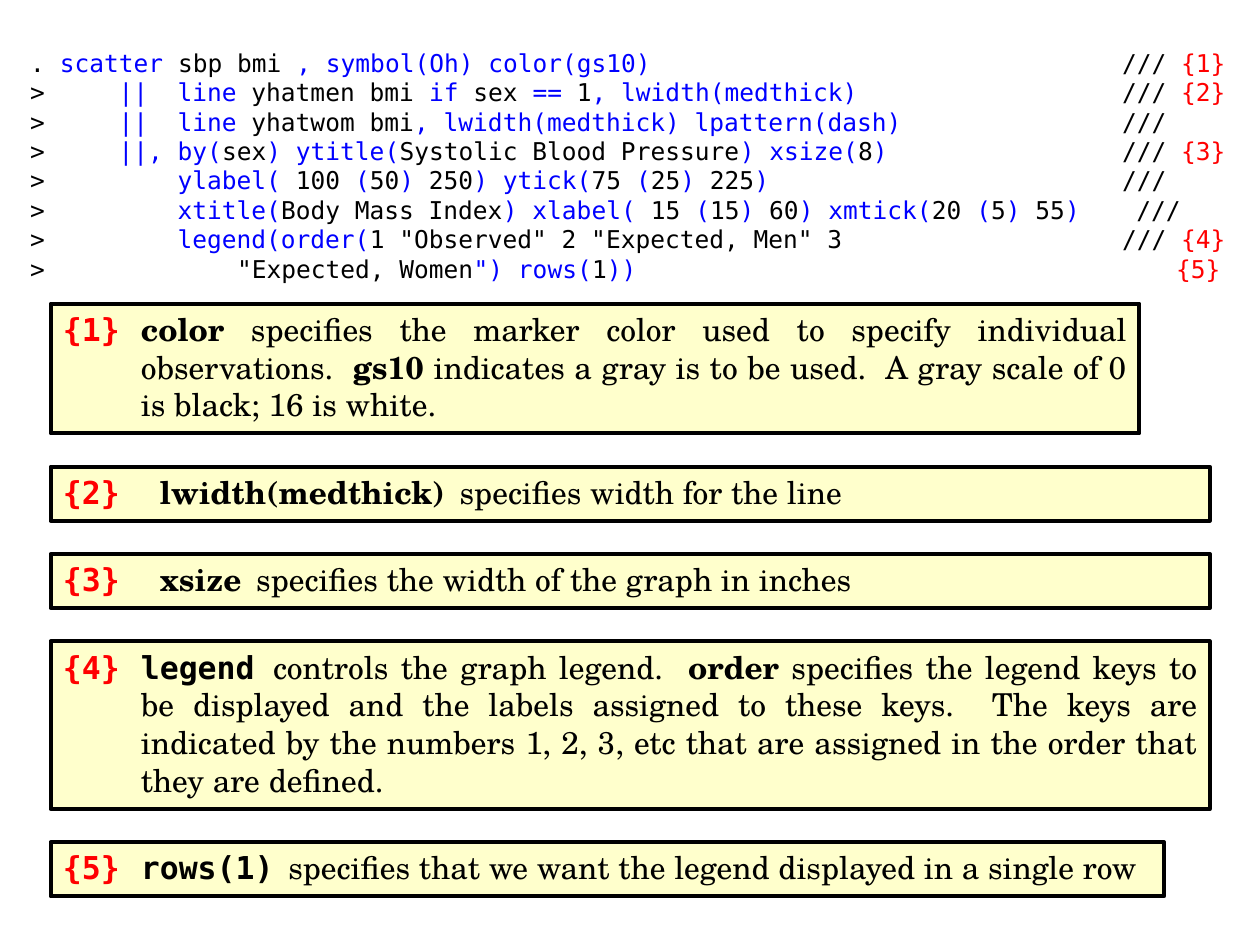
from lxml import etree
from pptx import Presentation
from pptx import util as u
from pptx.dml.color import RGBColor
from pptx.enum import shapes, text
from pptx.oxml import ns

MONO, SERIF = "DejaVu Sans Mono", "TeX Gyre Schola"
BLACK, BLUE, RED, CREAM = "000000", "0000FF", "FF0000", "FFFFCC"
STYLES = {
    "mark": (MONO, 18, True, RED),
    "code": (MONO, 18, True, BLACK),
    "gap": (MONO, 14, False, BLACK),
    "word": (SERIF, 18, True, BLACK),
    "body": (SERIF, 18, False, BLACK),
}


def tint(code):
    return RGBColor.from_string(code)


class Deck:
    def __init__(self, wide, high):
        self.prs = Presentation()
        self.prs.slide_width, self.prs.slide_height = u.Cm(wide), u.Cm(high)
        self.slide = self.prs.slides.add_slide(self.prs.slide_layouts[6])

    def run(self, para, words, font, size, bold, color):
        run = para.add_run()
        run.text = words
        run.font.name, run.font.size = font, u.Pt(size)
        run.font.bold = bold
        run.font.color.rgb = tint(color)

    def tabs(self, para, stops):
        props = para._p.get_or_add_pPr()
        group = etree.SubElement(props, ns.qn("a:tabLst"))
        for stop in stops:
            etree.SubElement(group, ns.qn("a:tab"), pos=str(u.Cm(stop)), algn="l")

    def frame(self, shape):
        frame = shape.text_frame
        frame.word_wrap = True
        frame.auto_size = text.MSO_AUTO_SIZE.SHAPE_TO_FIT_TEXT
        frame.vertical_anchor = text.MSO_ANCHOR.TOP
        return frame

    def listing(self, left, top, wide, high, rows):
        box = self.slide.shapes.add_textbox(*map(u.Cm, (left, top, wide, high)))
        frame = self.frame(box)
        for num, (code, mark, stops) in enumerate(rows):
            para = frame.add_paragraph() if num else frame.paragraphs[0]
            self.tabs(para, stops)
            for pos, part in enumerate(code.split("~")):
                if part:
                    self.run(para, part, MONO, 14, False, BLUE if pos % 2 else BLACK)
            if mark:
                self.run(para, mark, MONO, 14, False, RED)

    def note(self, left, top, wide, high, parts):
        box = self.slide.shapes.add_shape(
            shapes.MSO_SHAPE.RECTANGLE, *map(u.Cm, (left, top, wide, high)))
        box.shadow.inherit = False
        box.fill.solid()
        box.fill.fore_color.rgb = tint(CREAM)
        box.line.color.rgb = tint(BLACK)
        box.line.width = u.Pt(2.25)
        para = self.frame(box).paragraphs[0]
        para.alignment = text.PP_ALIGN.JUSTIFY
        props = para._p.get_or_add_pPr()
        props.set("marL", str(u.Cm(1.57)))
        props.set("indent", str(-u.Cm(1.57)))
        for style, words in parts:
            self.run(para, words, *STYLES[style])


IN1, IN2, IN3, END = 1.78, 2.97, 4.17, 22.01
ROWS = [
    (". ~scatter~ sbp bmi ~, symbol(Oh) color(gs10)~\t/// ", "{1}", [END]),
    (">\t~||\tline~ yhatmen bmi ~if~ sex ~==~ 1~, lwidth(medthick)~\t/// ",
     "{2}", [IN1, IN2, END]),
    (">\t~||\tline~ yhatwom bmi~, lwidth(medthick) lpattern(dash)~\t///",
     "", [IN1, IN2, END]),
    (">\t~||, by(~sex~) ytitle(~Systolic Blood Pressure~) xsize(~8~)~\t/// ",
     "{3}", [IN1, END]),
    (">\t~ylabel(~ 100 ~(~50~)~ 250~) ytick(~75 ~(~25~)~ 225~)~\t///",
     "", [IN2, END]),
    (">\t~xtitle(~Body Mass Index~) xlabel(~ 15 ~(~15~)~ 60~) xmtick(~20 ~(~5~)~ 55~)~\t///",
     "", [IN2, 22.3]),
    (">\t~legend(order(~1 \"Observed\" 2 \"Expected, Men\" 3\t/// ", "{4}", [IN2, END]),
    (">\t\"Expected, Women~\") rows(~1~))\t", "{5}", [IN3, 23.1]),
]

NOTES = [
    (21.95, 2.62, [
        ("mark", "{1}\t"), ("word", "color"),
        ("body", " specifies the marker color used to specify individual observations.  "),
        ("word", "gs10 "),
        ("body", "indicates a gray is to be used.  A gray scale of 0 is black; 16 is white.")]),
    (23.37, 1.09, [
        ("mark", "{2}\t "), ("word", "lwidth(medthick)"), ("gap", " "),
        ("body", "specifies width for the line")]),
    (23.37, 1.09, [
        ("mark", "{3}\t "), ("word", "xsize"), ("gap", " "),
        ("body", "specifies the width of the graph in inches")]),
    (23.37, 3.38, [
        ("mark", "{4}\t"), ("code", "legend"), ("gap", " "),
        ("body", "controls the graph legend.  "), ("word", "order"),
        ("body", " specifies the legend keys to be displayed and the labels assigned to "
                 "these keys.  The keys are indicated by the numbers 1, 2, 3, etc that "
                 "are assigned in the order that they are defined.")]),
    (22.45, 1.09, [
        ("mark", "{5}\t"), ("code", "rows(1)"), ("gap", " "),
        ("body", "specifies that we want the legend displayed in a single row")]),
]


def main():
    deck = Deck(25.4, 19.05)
    deck.listing(0.36, 0.84, 25.04, 4.98, ROWS)
    top, gap = 6.12, 0.67
    for wide, high, parts in NOTES:
        deck.note(1.02, top, wide, high, parts)
        top += high + gap
    deck.prs.save("out.pptx")


if __name__ == "__main__":
    main()
